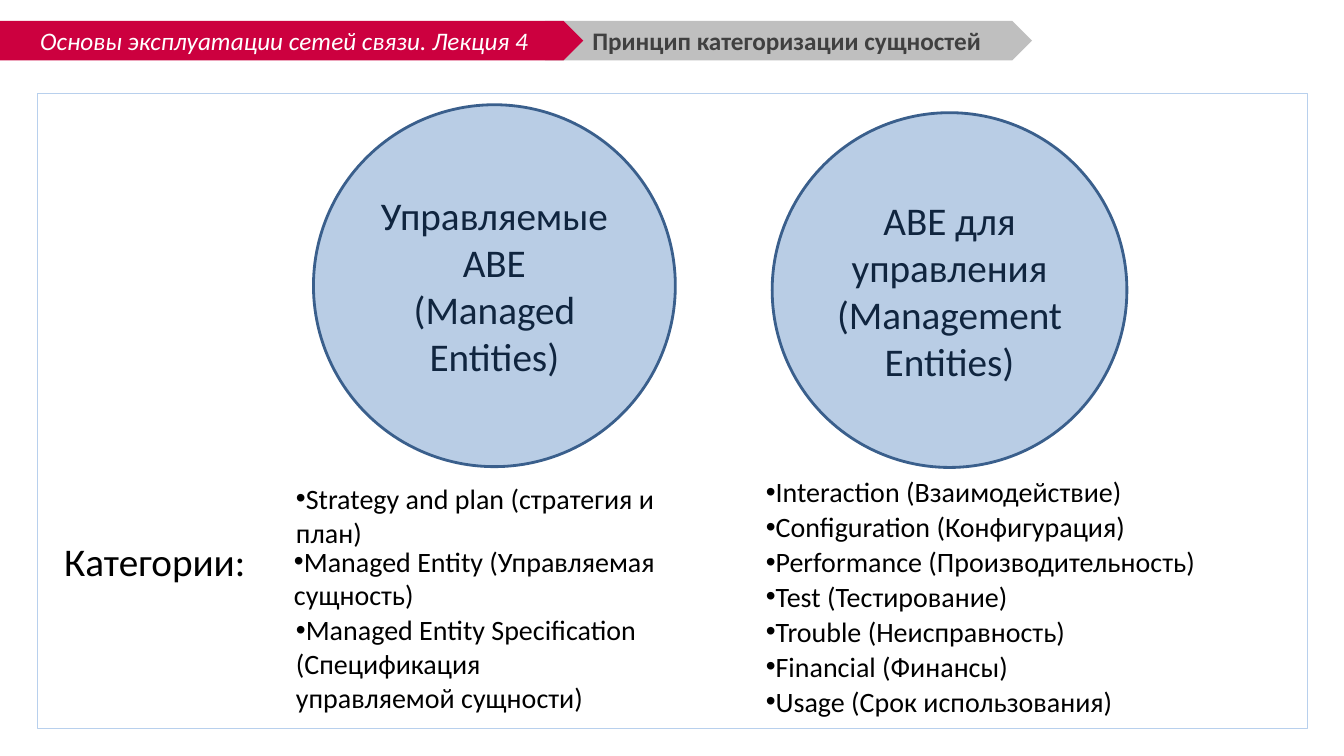
from lxml import etree
from pptx import Presentation
from pptx.dml.color import RGBColor
from pptx.enum.shapes import MSO_SHAPE
from pptx.enum.text import MSO_ANCHOR, MSO_AUTO_SIZE, PP_ALIGN
from pptx.oxml.ns import qn
from pptx.util import Cm, Pt

PENTAGON = MSO_SHAPE.PENTAGON
RECTANGLE = MSO_SHAPE.RECTANGLE
OVAL = MSO_SHAPE.OVAL
MIDDLE = MSO_ANCHOR.MIDDLE
TOP = MSO_ANCHOR.TOP
GROW = MSO_AUTO_SIZE.SHAPE_TO_FIT_TEXT
FIXED = MSO_AUTO_SIZE.NONE
CENTER = PP_ALIGN.CENTER
LEFT = PP_ALIGN.LEFT

WHITE = RGBColor(0xFF, 0xFF, 0xFF)
BLACK = RGBColor(0, 0, 0)
CRIMSON = RGBColor(0xCC, 0x00, 0x3F)
SILVER = RGBColor(0xBF, 0xBF, 0xBF)
CHARCOAL = RGBColor(0x40, 0x40, 0x40)
FRAME_BLUE = RGBColor(0xB8, 0xD0, 0xED)
PALE_BLUE = RGBColor(0xB9, 0xCD, 0xE5)
EDGE_BLUE = RGBColor(0x3A, 0x5F, 0x8C)
NAVY = RGBColor(0x10, 0x25, 0x3F)


class SlideBuilder:
    font_name = "Calibri"

    def __init__(self, slide):
        self.shapes = slide.shapes

    def add_text(self, frame, paragraphs, size, color, align=LEFT,
                 bold=False, italic=False, bullet=False):
        frame.word_wrap = True
        for index, text in enumerate(paragraphs):
            paragraph = frame.paragraphs[0] if index == 0 else frame.add_paragraph()
            paragraph.alignment = align
            if bullet:
                properties = paragraph._p.get_or_add_pPr()
                properties.set("marL", "0")
                properties.set("indent", "0")
                etree.SubElement(properties, qn("a:buFont"), typeface="Arial")
                etree.SubElement(properties, qn("a:buChar"), char="•")
            run = paragraph.add_run()
            run.text = text
            run.font.name = self.font_name
            run.font.size = Pt(size)
            run.font.color.rgb = color
            run.font.bold = bold
            run.font.italic = italic

    def shape(self, kind, box, fill=None, line=None, line_width=0):
        shape = self.shapes.add_shape(kind, *map(Cm, box))
        shape.shadow.inherit = False
        if fill is None:
            shape.fill.background()
        else:
            shape.fill.solid()
            shape.fill.fore_color.rgb = fill
        if line is None:
            shape.line.fill.background()
        else:
            shape.line.color.rgb = line
            shape.line.width = Pt(line_width)
        shape.text_frame.vertical_anchor = MIDDLE
        return shape

    def circle(self, left, top, diameter, paragraphs):
        circle = self.shape(OVAL, (left, top, diameter, diameter),
                            PALE_BLUE, EDGE_BLUE, 2)
        self.add_text(circle.text_frame, paragraphs, 28, NAVY, CENTER)

    def label(self, box, text, size, color=BLACK, anchor=TOP, fit=GROW, **style):
        frame = self.shapes.add_textbox(*map(Cm, box)).text_frame
        frame.vertical_anchor = anchor
        frame.auto_size = fit
        self.add_text(frame, [text], size, color, **style)

    def category(self, box, text):
        self.label(box, text, 20, bullet=True)


def main():
    presentation = Presentation()
    presentation.slide_width = Cm(33.87)
    presentation.slide_height = Cm(19.05)
    builder = SlideBuilder(presentation.slides.add_slide(presentation.slide_layouts[6]))

    header_top, header_height = 0.53, 0.99
    builder.shape(PENTAGON, (13.74, header_top, 12.27, header_height), SILVER)
    builder.shape(RECTANGLE, (0.94, 2.34, 32, 16), line=FRAME_BLUE, line_width=0.25)
    lecture = builder.shape(PENTAGON, (-0.13, header_top, 14.83, header_height), CRIMSON)
    builder.add_text(lecture.text_frame, ["Основы эксплуатации сетей связи. Лекция 4"],
                     18, WHITE, CENTER, italic=True)
    builder.label((14.68, header_top, 10.52, header_height),
                  "Принцип категоризации сущностей", 18, CHARCOAL,
                  anchor=MIDDLE, fit=FIXED, bold=True)

    builder.circle(7.9, 2.64, 9.12, ["Управляемые ABE", "(Managed Entities)"])
    builder.circle(19.46, 2.84, 8.94, ["ABE для управления", "(Management Entities)"])

    managed_categories = [
        ((7.21, 12.01, 9.65, 1.96), "Strategy and plan (стратегия и план)"),
        ((7.16, 13.59, 9.68, 1.96), "Managed Entity (Управляемая сущность)"),
        ((7.21, 15.32, 9.14, 2.82),
         "Managed Entity Specification (Спецификация управляемой сущности)"),
    ]
    for box, text in managed_categories:
        builder.category(box, text)

    management_categories = [
        "Interaction (Взаимодействие)",
        "Configuration (Конфигурация)",
        "Performance (Производительность)",
        "Test (Тестирование)",
        "Trouble (Неисправность)",
        "Financial (Финансы)",
        "Usage (Срок использования)",
    ]
    for row, text in enumerate(management_categories):
        builder.category((19.05, 11.84 + 0.88 * row, 11.96, 1.12), text)

    builder.label((1.37, 13.41, 5.16, 1.45), "Категории:", 28)

    presentation.save("out.pptx")


if __name__ == "__main__":
    main()
